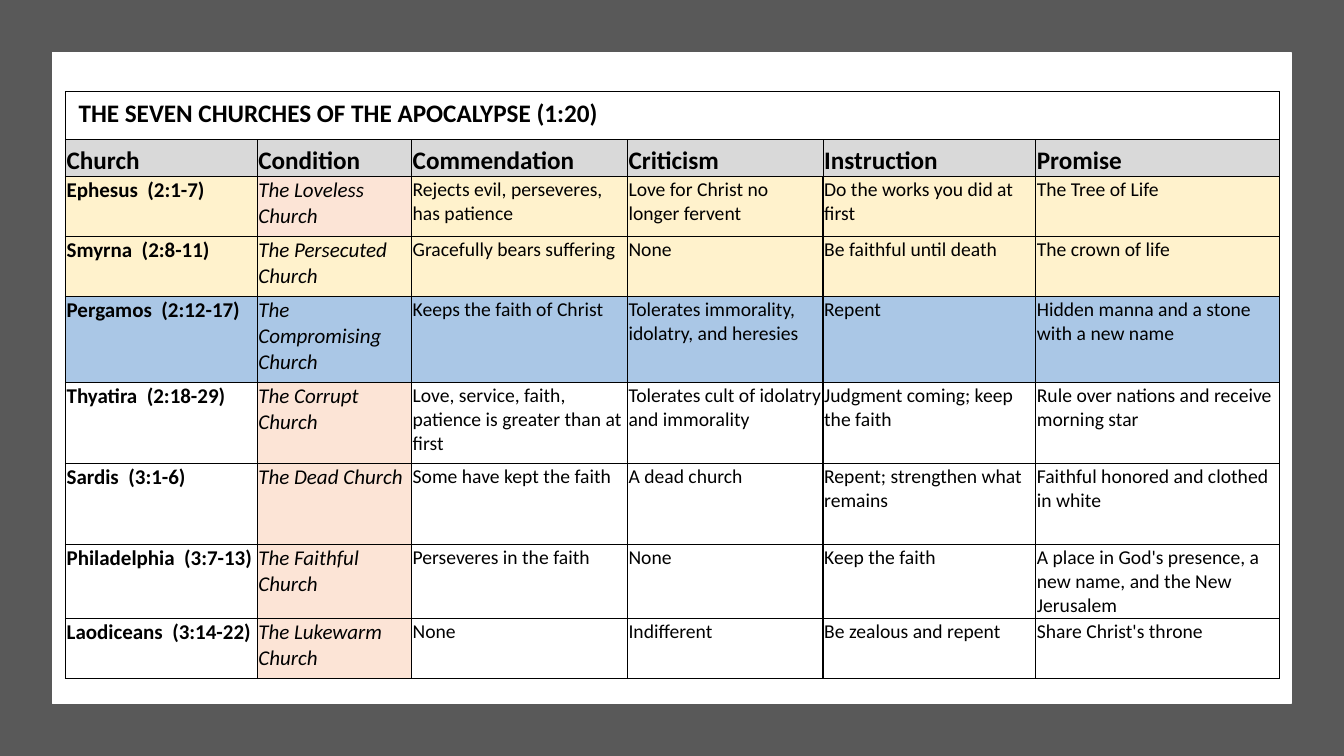
import pptx
import pptx.dml.color
import pptx.enum.shapes
import pptx.enum.text
import pptx.oxml
import pptx.oxml.ns
import pptx.util
from pptx.util import Cm

COLORS = {
    "backdrop": "595959", "white": "FFFFFF", "black": "000000", "header": "D9D9D9",
    "cream": "FFF2CC", "peach": "FCE4D6", "blue": "AAC7E6",
}


def rgb(name):
    return pptx.dml.color.RGBColor.from_string(COLORS[name])


def set_borders(cell, left, right, top, bottom):
    """Draw the four cell borders, widths in points; 0 hides a border."""
    properties = cell._tc.get_or_add_tcPr()
    for place, (side, width) in enumerate(zip("LRTB", (left, right, top, bottom))):
        paint = f'<a:solidFill><a:srgbClr val="{COLORS["black"]}"/></a:solidFill>' if width else "<a:noFill/>"
        properties.insert(place, pptx.oxml.parse_xml(
            f'<a:ln{side} {pptx.oxml.ns.nsdecls("a")} w="{int(width * 12700)}">{paint}</a:ln{side}>'))


presentation = pptx.Presentation()
presentation.slide_width, presentation.slide_height = Cm(33.87), Cm(19.05)
slide = presentation.slides.add_slide(presentation.slide_layouts[6])

# Dark backdrop and white panel
for color, box in (("backdrop", (0, 0, 33.87, 19.05)), ("white", (1.32, 1.33, 31.22, 16.4))):
    panel = slide.shapes.add_shape(pptx.enum.shapes.MSO_SHAPE.RECTANGLE, *map(Cm, box))
    panel.shadow.inherit = False
    panel.fill.solid()
    panel.fill.fore_color.rgb = rgb(color)
    if color == "white":
        panel.line.color.rgb = rgb(color)
        panel.line.width = pptx.util.Pt(1)
    else:
        panel.line.fill.background()

# Wording of the table
heading = "THE SEVEN CHURCHES OF THE APOCALYPSE (1:20)"
columns = ["Church", "Condition", "Commendation", "Criticism", "Instruction", "Promise"]
churches = [
    ["Ephesus  (2:1-7)", "The Loveless Church", "Rejects evil, perseveres, has patience",
     "Love for Christ no longer fervent", "Do the works you did at first", "The Tree of Life"],
    ["Smyrna  (2:8-11)", "The Persecuted Church", "Gracefully bears suffering",
     "None", "Be faithful until death", "The crown of life"],
    ["Pergamos  (2:12-17)", "The Compromising Church", "Keeps the faith of Christ",
     "Tolerates immorality, idolatry, and heresies", "Repent",
     "Hidden manna and a stone with a new name"],
    ["Thyatira  (2:18-29)", "The Corrupt Church",
     "Love, service, faith, patience is greater than at first",
     "Tolerates cult of idolatry and immorality", "Judgment coming; keep the faith",
     "Rule over nations and receive morning star"],
    ["Sardis  (3:1-6)", "The Dead Church", "Some have kept the faith", "A dead church",
     "Repent; strengthen what remains", "Faithful honored and clothed in white"],
    ["Philadelphia  (3:7-13)", "The Faithful Church", "Perseveres in the faith", "None",
     "Keep the faith", "A place in God's presence, a new name, and the New Jerusalem"],
    ["Laodiceans  (3:14-22)", "The Lukewarm Church", "None", "Indifferent",
     "Be zealous and repent", "Share Christ's throne"],
]
row_fills = [None, "header", "cream", "cream", "blue", None, None, None, None]
peach_rows = (2, 5, 6, 7, 8)
grid = [[heading] + [""] * 5, columns] + churches
last_row, last_column = len(grid) - 1, len(columns) - 1

# Table frame
column_widths = [4.83, 3.89, 5.44, 4.93, 5.36, 6.15]
row_heights = [1.21, 0.93, 1.51, 1.51, 2.17, 2.04, 2.04, 1.87, 1.51]
table = slide.shapes.add_table(
    len(grid), len(columns), Cm(1.65), Cm(2.31),
    Cm(sum(column_widths)), Cm(sum(row_heights))).table
table.first_row = table.horz_banding = False
for column, width in zip(table.columns, column_widths):
    column.width = Cm(width)
for row, height in zip(table.rows, row_heights):
    row.height = Cm(height)
table.cell(0, 0).merge(table.cell(0, 4))

# Cells
for r, texts in enumerate(grid):
    for c, text in enumerate(texts):
        cell = table.cell(r, c)
        fill = "peach" if c == 1 and r in peach_rows else row_fills[r]
        if fill:
            cell.fill.solid()
            cell.fill.fore_color.rgb = rgb(fill)
        else:
            cell.fill.background()

        if r == 0:
            cell.margin_left = cell.margin_right = Cm(0.33)
            cell.margin_top = cell.margin_bottom = Cm(0.18)
            set_borders(cell, int(c == 0), int(c == last_column), 1, 1)
        else:
            cell.margin_left = cell.margin_right = cell.margin_top = Cm(0.03)
            cell.margin_bottom = 0
            inner = 0.5 if r == 1 else 1
            set_borders(cell, 1 if c == 0 else inner, 1 if c == last_column else inner,
                        1 if r <= 2 else 0.5, 1 if r in (1, last_row) else 0.5)
        if r == 1:
            cell.vertical_anchor = pptx.enum.text.MSO_ANCHOR.BOTTOM

        cell.text = text
        font = cell.text_frame.paragraphs[0].font
        font.name = "Calibri"
        font.size = pptx.util.Pt(18 if r < 2 else 15 if c < 2 else 14)
        font.bold = r < 2 or c == 0
        font.italic = r >= 2 and c == 1
        font.color.rgb = rgb("black")

presentation.save("out.pptx")
